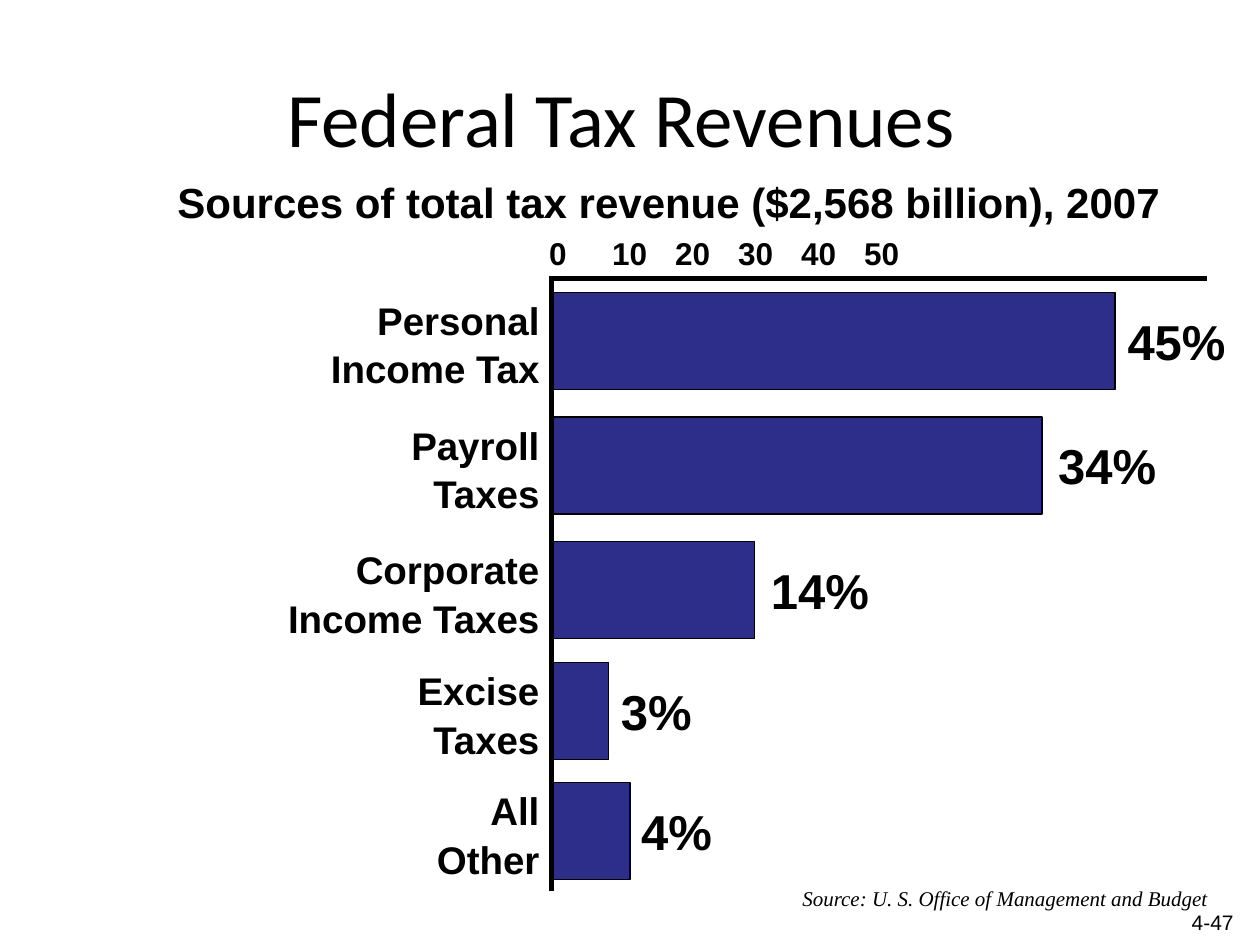
from pptx import Presentation
from pptx.dml.color import RGBColor
from pptx.enum.shapes import MSO_CONNECTOR, MSO_SHAPE
from pptx.enum.text import MSO_ANCHOR, PP_ALIGN
from pptx.oxml.ns import qn
from pptx.util import Inches, Pt
from lxml.etree import SubElement

COLORS = {"text": "000000", "bar": "2D2D8A", "background": "FFFFFF"}
BAR_LEFT = 4.39
BAR_HEIGHT = 0.77
LABEL_RIGHT = 4.38

BARS = [
    ("Personal\nIncome Tax", 1.89, 2.32, 4.46, "45%", 8.85, 0.99),
    ("Payroll\nTaxes", 1.24, 3.31, 3.88, "34%", 8.3, 0.99),
    ("Corporate\nIncome Taxes", 2.23, 4.3, 1.6, "14%", 6.02, 0.99),
    ("Excise\nTaxes", 1.17, 5.26, 0.44, "3%", 4.83, 0.76),
    ("All\nOther", 1.03, 6.21, 0.61, "4%", 4.99, 0.76),
]


class SlideBuilder:
    def __init__(self, slide):
        self.slide = slide
        fill = slide.background.fill
        fill.solid()
        fill.fore_color.rgb = self.color("background")

    def color(self, name):
        return RGBColor.from_string(COLORS[name])

    def format(self, paragraph, size, font, bold, italic, align):
        paragraph.alignment = align
        paragraph.font.size = Pt(size)
        paragraph.font.name = font
        paragraph.font.bold = bold
        paragraph.font.italic = italic
        paragraph.font.color.rgb = self.color("text")

    def title(self, text, left, top, width, height):
        shape = self.slide.shapes.title
        shape.left, shape.top = Inches(left), Inches(top)
        shape.width, shape.height = Inches(width), Inches(height)
        shape.text_frame.text = text
        shape.text_frame.vertical_anchor = MSO_ANCHOR.MIDDLE
        self.format(shape.text_frame.paragraphs[0], 44, "Calibri", False, False, PP_ALIGN.CENTER)

    def text(self, text, left, top, width, height, size, font="Arial", bold=True,
             italic=False, align=PP_ALIGN.LEFT, spacing=None, wrap=False):
        shape = self.slide.shapes.add_textbox(
            Inches(left), Inches(top), Inches(width), Inches(height))
        shape.text_frame.word_wrap = wrap
        shape.text_frame.text = text
        for paragraph in shape.text_frame.paragraphs:
            self.format(paragraph, size, font, bold, italic, align)
            paragraph.line_spacing = spacing

    def bar(self, top, width):
        shape = self.slide.shapes.add_shape(
            MSO_SHAPE.RECTANGLE, Inches(BAR_LEFT), Inches(top), Inches(width), Inches(BAR_HEIGHT))
        shape.shadow.inherit = False
        shape.fill.solid()
        shape.fill.fore_color.rgb = self.color("bar")
        shape.line.color.rgb = self.color("text")
        shape.line.width = Pt(0.75)

    def axis(self, start_x, start_y, end_x, end_y):
        connector = self.slide.shapes.add_connector(
            MSO_CONNECTOR.STRAIGHT, Inches(start_x), Inches(start_y), Inches(end_x), Inches(end_y))
        connector.line.color.rgb = self.color("text")
        connector.line.width = Pt(3)
        SubElement(connector._element.spPr, qn("a:effectLst"))


def main():
    presentation = Presentation()
    presentation.slide_width, presentation.slide_height = Inches(10), Inches(7.5)
    builder = SlideBuilder(presentation.slides.add_slide(presentation.slide_layouts[5]))

    builder.title("Federal Tax Revenues ", 0.5, 0.3, 9, 1.25)
    builder.text("Sources of total tax revenue ($2,568 billion), 2007", 1.31, 1.35, 8.08, 0.51, 24)
    builder.text("\t".join(str(tick) for tick in range(0, 51, 10)), 4.26, 1.81, 5.48, 0.4, 18)

    for label, label_width, top, width, value, value_left, value_width in BARS:
        builder.text(label, LABEL_RIGHT - label_width, top - 0.03, label_width, 0.83, 22,
                     align=PP_ALIGN.RIGHT, spacing=1.05)
        builder.bar(top, width)
        builder.text(value, value_left, top + 0.1, value_width, 0.57, 28)

    builder.axis(4.37, 2.21, 9.58, 2.21)
    builder.axis(4.38, 2.19, 4.38, 7.07)
    builder.text("Source: U. S. Office of Management and Budget", 6.27, 6.98, 3.43, 0.3, 12,
                 font="Times New Roman", bold=False, italic=True)
    builder.text("4-47", 7.56, 7.17, 2.33, 0.27, 12, bold=False, align=PP_ALIGN.RIGHT, wrap=True)

    presentation.save("out.pptx")


if __name__ == "__main__":
    main()
